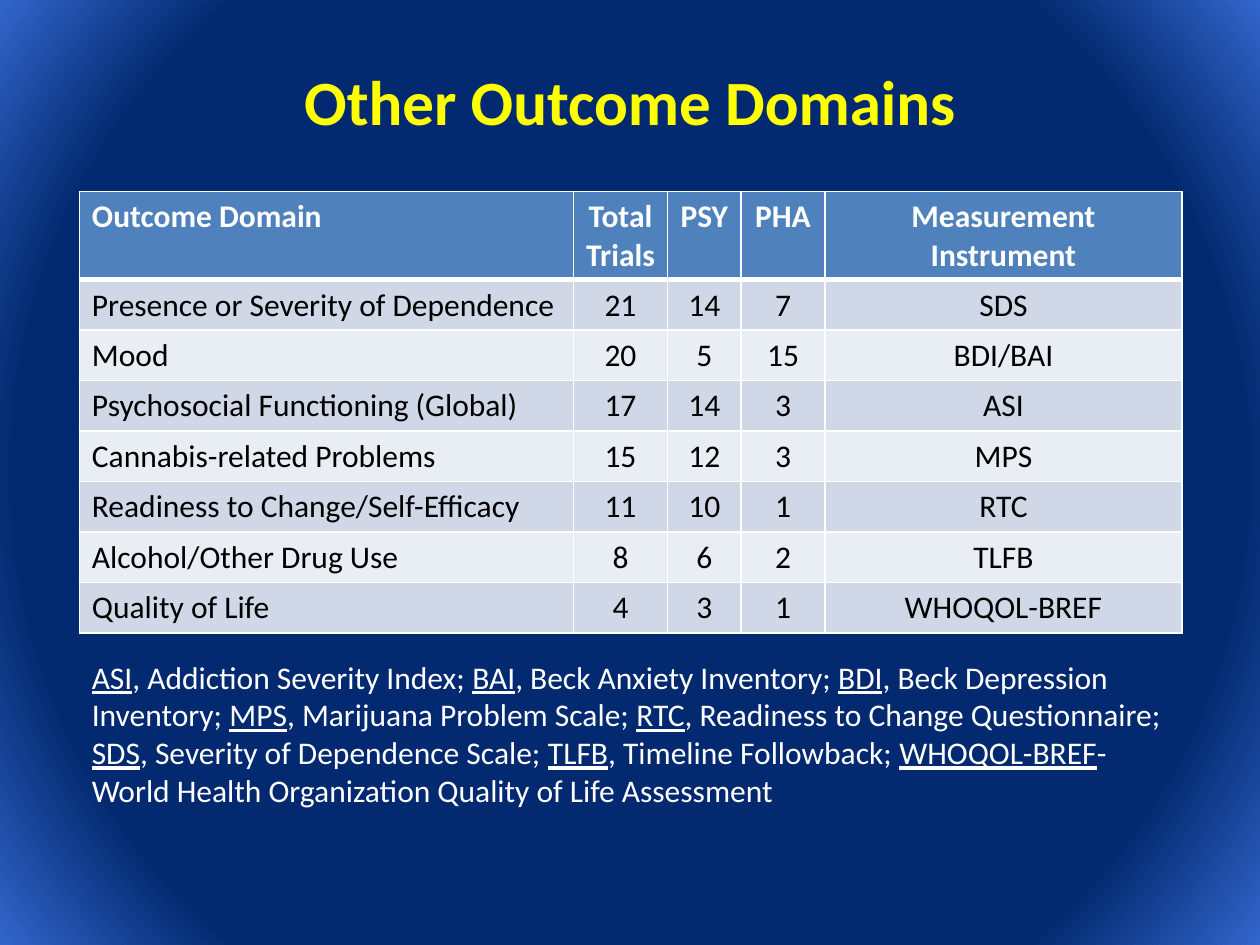
from lxml import etree
from pptx import Presentation
from pptx import util as u
from pptx.dml.color import RGBColor
from pptx.enum import text
from pptx.oxml.ns import qn

LEFT, WIDTH = 0.63, 8.75
COLUMN_WIDTHS = [3.92, 0.75, 0.58, 0.67, 2.83]
HEADER_HEIGHT, ROW_HEIGHT = 0.7, 0.4
ROWS = [
    ("Outcome Domain", "Total\nTrials", "PSY", "PHA", "Measurement Instrument"),
    ("Presence or Severity of Dependence", 21, 14, 7, "SDS"),
    ("Mood", 20, 5, 15, "BDI/BAI"),
    ("Psychosocial Functioning (Global)", 17, 14, 3, "ASI"),
    ("Cannabis-related Problems", 15, 12, 3, "MPS"),
    ("Readiness to Change/Self-Efficacy", 11, 10, 1, "RTC"),
    ("Alcohol/Other Drug Use", 8, 6, 2, "TLFB"),
    ("Quality of Life", 4, 3, 1, "WHOQOL-BREF"),
]
ABBREVIATIONS = [
    ("ASI", ", Addiction Severity Index; "),
    ("BAI", ", Beck Anxiety Inventory; "),
    ("BDI", ", Beck Depression Inventory; "),
    ("MPS", ", Marijuana Problem Scale; "),
    ("RTC", ", Readiness to Change Questionnaire; "),
    ("SDS", ", Severity of Dependence Scale; "),
    ("TLFB", ", Timeline Followback; "),
    ("WHOQOL-BREF", "-World Health Organization Quality of Life Assessment"),
]


def color(value):
    return RGBColor.from_string(value)


class OutcomeSlide:
    """Holds the deck's style and the slide being built."""

    font = "Calibri"
    white, black, yellow = "FFFFFF", "000000", "FFFF00"
    header_fill, band_fills = "4F81BD", ("E9EDF4", "D0D8E8")
    glow = [(0.78, "032A70"), (1, "3366CC")]

    def __init__(self, slide):
        self.slide = slide

    def background(self):
        fill = self.slide.background.fill
        fill.gradient()
        for stop, (position, value) in zip(fill.gradient_stops, self.glow):
            stop.position = position
            stop.color.rgb = color(value)
        gradient = self.slide.element.find(".//" + qn("a:gradFill"))
        gradient.remove(gradient.find(qn("a:lin")))
        circle = etree.SubElement(gradient, qn("a:path"), path="circle")
        etree.SubElement(circle, qn("a:fillToRect"), {side: "50000" for side in "ltrb"})

    def style(self, paragraph, value, size=18, bold=False, centered=False):
        font = paragraph.font
        font.name, font.size, font.bold = self.font, u.Pt(size), bold
        font.color.rgb = color(value)
        paragraph.alignment = text.PP_ALIGN.CENTER if centered else text.PP_ALIGN.LEFT

    def text_box(self, left, top, width, height):
        box = self.slide.shapes.add_textbox(*map(u.Inches, (left, top, width, height)))
        box.text_frame.word_wrap = True
        return box.text_frame

    def title(self, words):
        frame = self.text_box(0.5, 0.17, 9, 1.25)
        frame.vertical_anchor = text.MSO_ANCHOR.MIDDLE
        frame.text = words
        self.style(frame.paragraphs[0], self.yellow, 36, True, True)

    def glossary(self, entries):
        frame = self.text_box(LEFT, 5.17, WIDTH, 1.33)
        frame.auto_size = text.MSO_AUTO_SIZE.SHAPE_TO_FIT_TEXT
        paragraph = frame.paragraphs[0]
        self.style(paragraph, self.white)
        for term, meaning in entries:
            for words, underlined in ((term, True), (meaning, False)):
                run = paragraph.add_run()
                run.text, run.font.underline = words, underlined

    def borders(self, cell, top, bottom):
        properties = cell._tc.get_or_add_tcPr()
        for side, points in (("L", 1), ("R", 1), ("T", top), ("B", bottom)):
            line = etree.SubElement(properties, qn("a:ln" + side), w=str(u.Pt(points)))
            solid = etree.SubElement(line, qn("a:solidFill"))
            etree.SubElement(solid, qn("a:srgbClr"), val=self.white)

    def cell(self, cell, value, row, column):
        header = row == 0
        self.borders(cell, 3 if row == 1 else 1, 3 if header else 1)
        cell.fill.solid()
        cell.fill.fore_color.rgb = color(self.header_fill if header else self.band_fills[row % 2])
        cell.text = str(value)
        for paragraph in cell.text_frame.paragraphs:
            self.style(paragraph, self.white if header else self.black,
                       bold=header, centered=column > 0)

    def table(self, rows):
        heights = [HEADER_HEIGHT] + [ROW_HEIGHT] * (len(rows) - 1)
        table = self.slide.shapes.add_table(
            len(rows), len(COLUMN_WIDTHS), u.Inches(LEFT), u.Inches(1.52),
            u.Inches(WIDTH), u.Inches(sum(heights))).table
        for column, width in zip(table.columns, COLUMN_WIDTHS):
            column.width = u.Inches(width)
        for row, (height, values) in enumerate(zip(heights, rows)):
            table.rows[row].height = u.Inches(height)
            for column, value in enumerate(values):
                self.cell(table.cell(row, column), value, row, column)


def main():
    presentation = Presentation()
    presentation.slide_width, presentation.slide_height = u.Inches(10), u.Inches(7.5)
    outcomes = OutcomeSlide(presentation.slides.add_slide(presentation.slide_layouts[6]))
    outcomes.background()
    outcomes.title("Other Outcome Domains")
    outcomes.table(ROWS)
    outcomes.glossary(ABBREVIATIONS)
    presentation.save("out.pptx")


if __name__ == "__main__":
    main()
